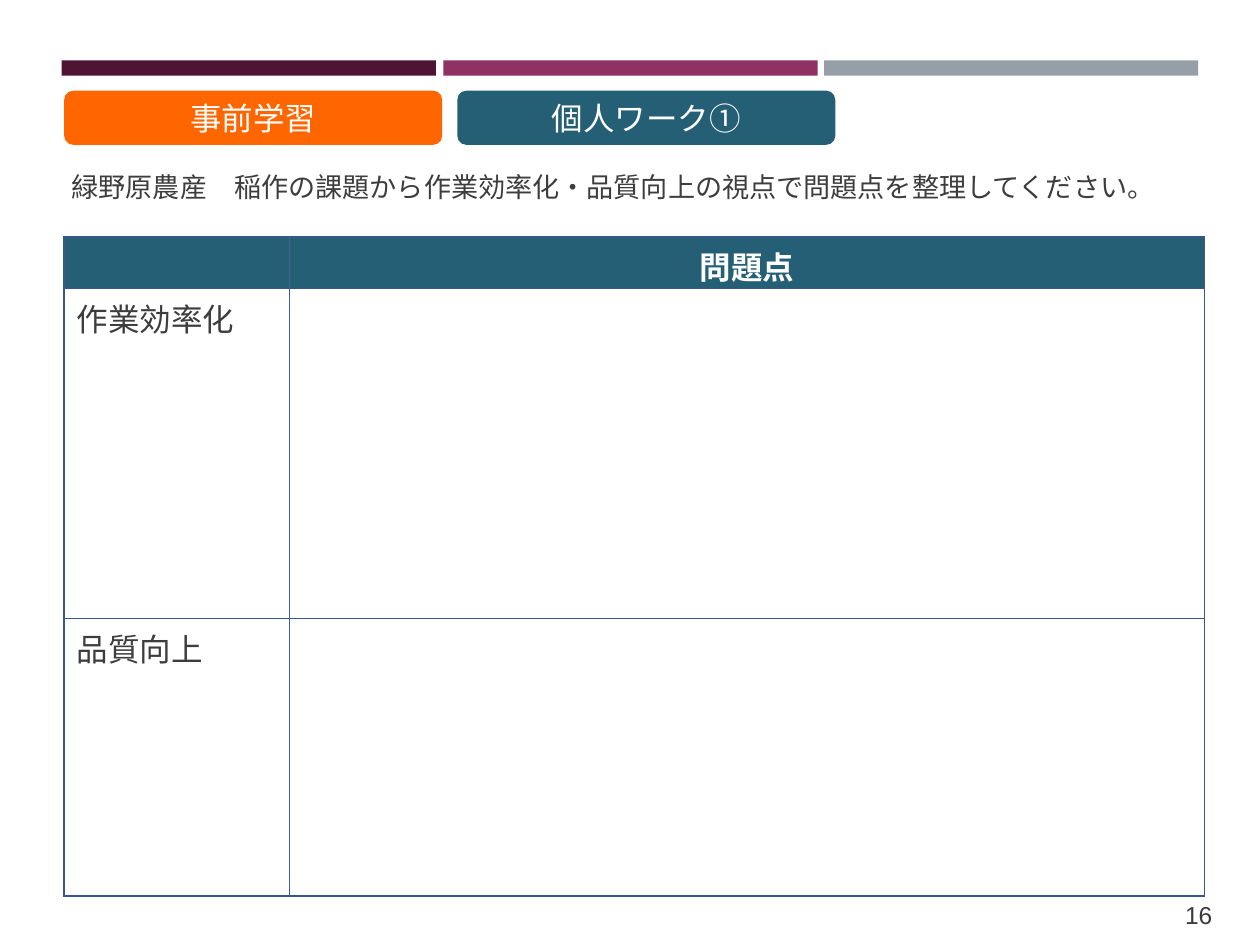
from lxml.etree import SubElement
from pptx import Presentation
from pptx.dml.color import RGBColor
from pptx.enum.shapes import MSO_SHAPE
from pptx.enum.text import MSO_ANCHOR, PP_ALIGN
from pptx.oxml.ns import qn
from pptx.util import Inches, Pt

# Content
BARS = [("4D1434", 0.49), ("903163", 3.52), ("969FA7", 6.54)]
TAGS = [("事前学習", "FF6600"), ("個人ワーク①", "255F75")]
TASK = "緑野原農産　稲作の課題から作業効率化・品質向上の視点で問題点を整理してください。"
ROWS = [("", "問題点"), ("作業効率化", ""), ("品質向上", "")]
COLS = [1.79, 7.26]
HIGHS = [0.41, 2.62, 2.2]
PAGE = "16"
TEAL, WHITE, INK = "255F75", "FFFFFF", "3D3D3D"
EDGE, INNER = "3A578D", "40619D"


def color(code):
    return RGBColor.from_string(code)


def write(frame, text, size, code, align=PP_ALIGN.LEFT, font="Calibri", bold=False):
    para = frame.paragraphs[0]
    para.alignment = align
    run = para.add_run()
    run.text = text
    run.font.size = Pt(size)
    run.font.name = font
    run.font.bold = bold
    run.font.color.rgb = color(code)


def add_block(kind, box, code):
    shape = slide.shapes.add_shape(kind, *map(Inches, box))
    shape.shadow.inherit = False
    shape.fill.solid()
    shape.fill.fore_color.rgb = color(code)
    shape.line.fill.background()
    return shape


def add_label(box, anchor):
    frame = slide.shapes.add_textbox(*map(Inches, box)).text_frame
    frame.word_wrap = True
    frame.vertical_anchor = anchor
    return frame


def add_edges(cell, codes):
    props = cell._tc.get_or_add_tcPr()
    for side, code in zip("LRTB", codes):
        line = SubElement(props, qn(f"a:ln{side}"), w=str(Pt(1)))
        fill = SubElement(line, qn("a:solidFill"))
        SubElement(fill, qn("a:srgbClr"), val=code)


deck = Presentation()
deck.slide_width, deck.slide_height = Inches(10), Inches(7.5)
slide = deck.slides.add_slide(deck.slide_layouts[6])

# Top bars
for code, left in BARS:
    add_block(MSO_SHAPE.RECTANGLE, (left, 0.48, 2.97, 0.12), code)

# Section tags
for i, (text, code) in enumerate(TAGS):
    tag = add_block(MSO_SHAPE.ROUNDED_RECTANGLE, (0.51 + 3.12 * i, 0.72, 3, 0.43), code)
    tag.text_frame.vertical_anchor = MSO_ANCHOR.MIDDLE
    write(tag.text_frame, text, 18, WHITE, PP_ALIGN.CENTER)

# Task
task = add_label((0.47, 1.3, 9.28, 0.43), MSO_ANCHOR.TOP)
write(task, TASK, 15.5, INK)

# Worksheet table
grid = slide.shapes.add_table(
    len(ROWS), len(COLS), Inches(0.51), Inches(1.88),
    Inches(sum(COLS)), Inches(sum(HIGHS))).table
for col, wide in zip(grid.columns, COLS):
    col.width = Inches(wide)
for r, (row, texts) in enumerate(zip(grid.rows, ROWS)):
    row.height = Inches(HIGHS[r])
    head = r == 0
    for c, text in enumerate(texts):
        cell = grid.cell(r, c)
        sides = (EDGE, INNER) if c == 0 else (INNER, EDGE)
        add_edges(cell, sides + (EDGE, EDGE))
        cell.fill.solid()
        cell.fill.fore_color.rgb = color(TEAL if head else WHITE)
        if text:
            write(cell.text_frame, text, 18, WHITE if head else INK,
                  PP_ALIGN.CENTER if head else PP_ALIGN.LEFT, bold=head)

# Page number
page = add_label((7.47, 7.06, 2.25, 0.4), MSO_ANCHOR.MIDDLE)
write(page, PAGE, 14, "3B3B3B", PP_ALIGN.RIGHT, "Arial")

deck.save("out.pptx")
